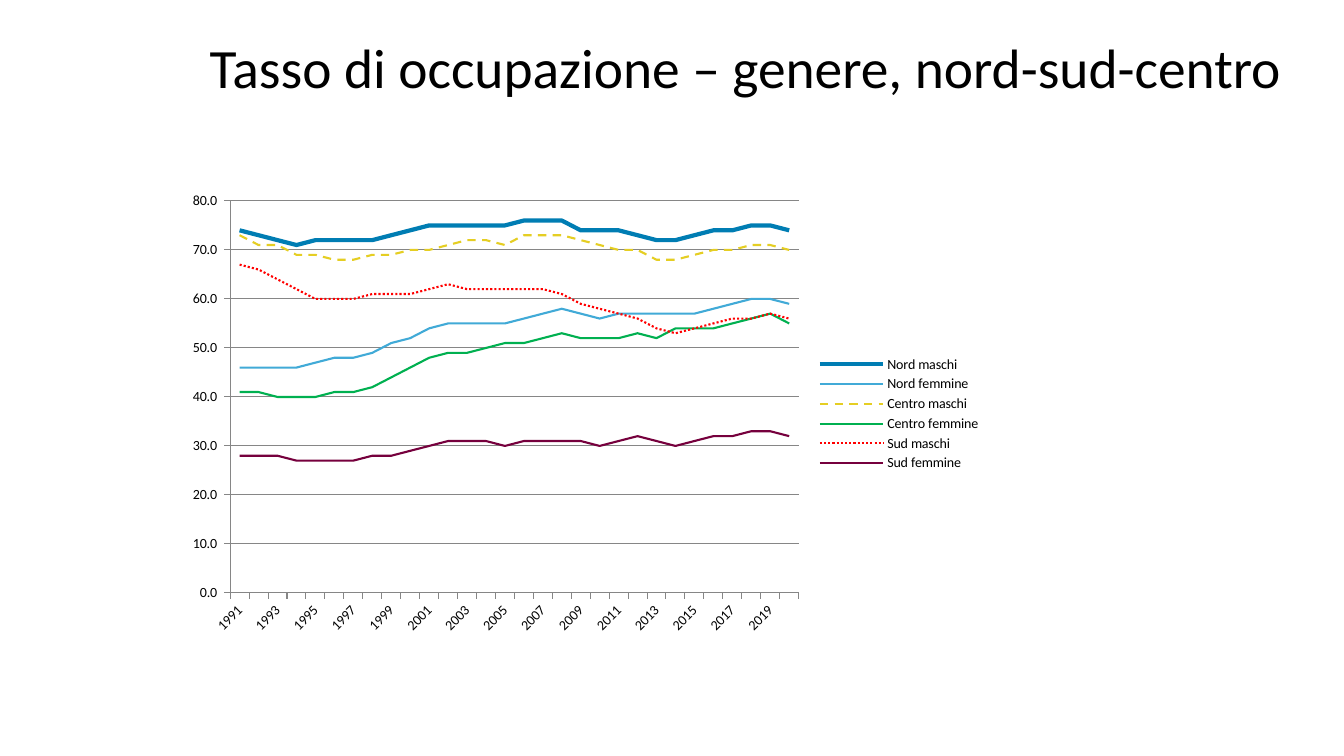
from lxml import etree
from pptx import Presentation
from pptx.chart.data import CategoryChartData
from pptx.dml.color import RGBColor
from pptx.enum.chart import XL_CHART_TYPE as ChartType, XL_LEGEND_POSITION as LegendPosition
from pptx.enum.chart import XL_MARKER_STYLE as MarkerStyle, XL_TICK_MARK as TickMark
from pptx.enum.dml import MSO_LINE_DASH_STYLE as Dash
from pptx.enum.text import MSO_ANCHOR as Anchor, MSO_AUTO_SIZE as AutoSize, PP_ALIGN as Align
from pptx.oxml.ns import qn
from pptx.util import Inches, Pt

FONT = "Calibri"
COLORS = {
    "text": "000000", "axis": "868686",
    "Nord maschi": "007DB3", "Nord femmine": "41AAD7",
    "Centro maschi": "E5CE23", "Centro femmine": "00B050",
    "Sud maschi": "FF0000", "Sud femmine": "76003D",
}
YEARS = [str(year) for year in range(1991, 2021)]
RATES = {
    "Nord maschi": [74, 73, 72, 71, 72, 72, 72, 72, 73, 74, 75, 75, 75, 75, 75,
                    76, 76, 76, 74, 74, 74, 73, 72, 72, 73, 74, 74, 75, 75, 74],
    "Nord femmine": [46, 46, 46, 46, 47, 48, 48, 49, 51, 52, 54, 55, 55, 55, 55,
                     56, 57, 58, 57, 56, 57, 57, 57, 57, 57, 58, 59, 60, 60, 59],
    "Centro maschi": [73, 71, 71, 69, 69, 68, 68, 69, 69, 70, 70, 71, 72, 72, 71,
                      73, 73, 73, 72, 71, 70, 70, 68, 68, 69, 70, 70, 71, 71, 70],
    "Centro femmine": [41, 41, 40, 40, 40, 41, 41, 42, 44, 46, 48, 49, 49, 50, 51,
                       51, 52, 53, 52, 52, 52, 53, 52, 54, 54, 54, 55, 56, 57, 55],
    "Sud maschi": [67, 66, 64, 62, 60, 60, 60, 61, 61, 61, 62, 63, 62, 62, 62,
                   62, 62, 61, 59, 58, 57, 56, 54, 53, 54, 55, 56, 56, 57, 56],
    "Sud femmine": [28, 28, 28, 27, 27, 27, 27, 28, 28, 29, 30, 31, 31, 31, 30,
                    31, 31, 31, 31, 30, 31, 32, 31, 30, 31, 32, 32, 33, 33, 32],
}
# Series that differ from a thin solid line
WIDTHS = {"Nord maschi": 3}
DASHES = {"Centro maschi": Dash.DASH, "Sud maschi": Dash.ROUND_DOT}


def rgb(name):
    return RGBColor.from_string(COLORS[name])


def format_font(font, size, color="text"):
    font.name, font.size, font.bold = FONT, Pt(size), False
    font.color.rgb = rgb(color)


def write_text(frame, text, *, size, color="text", align=Align.LEFT, spacing=1.0):
    para = frame.paragraphs[0]
    para.alignment, para.line_spacing = align, spacing
    span = para.add_run()
    span.text = text
    format_font(span.font, size, color)


def add_child(parent, tag, value):
    etree.SubElement(parent, qn(f"c:{tag}")).set("val", str(value))


def add_title(page, left, top, width, height):
    title = page.shapes.title
    title.left, title.top = Inches(left), Inches(top)
    title.width, title.height = Inches(width), Inches(height)
    frame = title.text_frame
    frame.word_wrap, frame.auto_size = True, AutoSize.NONE
    frame.vertical_anchor = Anchor.MIDDLE
    write_text(frame, "Tasso di occupazione – genere, nord-sud-centro",
               size=39.6, spacing=0.9)


def place_plot(chart, **fractions):
    """Fix the inner plot area as fractions of the chart box."""
    plot_area = chart.plots[0]._element.getparent()
    for old in plot_area.findall(qn("c:layout")):
        plot_area.remove(old)
    layout = etree.Element(qn("c:layout"))
    manual = etree.SubElement(layout, qn("c:manualLayout"))
    add_child(manual, "layoutTarget", "inner")
    for key in ("x", "y"):
        add_child(manual, f"{key}Mode", "edge")
    for key, value in fractions.items():
        add_child(manual, key, value)
    plot_area.insert(0, layout)


def format_axes(chart):
    years, rates = chart.category_axis, chart.value_axis
    for axis in (years, rates):
        axis.major_tick_mark, axis.minor_tick_mark = TickMark.OUTSIDE, TickMark.NONE
        axis.format.line.color.rgb = rgb("axis")
        axis.format.line.width = Pt(0.75)
        format_font(axis.tick_labels.font, 10)
    # Slanted label for every second year
    years.has_major_gridlines = False
    years._element.find(qn("c:txPr")).find(qn("a:bodyPr")).set("rot", "-2700000")
    skip = etree.Element(qn("c:tickLblSkip"))
    skip.set("val", "2")
    years._element.find(qn("c:noMultiLvlLbl")).addprevious(skip)
    rates.minimum_scale, rates.maximum_scale, rates.major_unit = 0, 80, 10
    rates.tick_labels.number_format = "#,##0.0_ ;\\-#,##0.0\\ "
    rates.tick_labels.number_format_is_linked = False
    rates.has_major_gridlines = True
    rates.major_gridlines.format.line.color.rgb = rgb("axis")
    rates.major_gridlines.format.line.width = Pt(0.75)


def add_rate_chart(page, left, top, width, height):
    data = CategoryChartData(number_format="0.0")
    data.categories = YEARS
    for name, values in RATES.items():
        data.add_series(name, values)
    chart = page.shapes.add_chart(ChartType.LINE, Inches(left), Inches(top),
                                  Inches(width), Inches(height), data).chart
    format_font(chart.font, 10)
    chart.has_title = False
    chart.plots[0].vary_by_categories = False
    place_plot(chart, x=0.066, y=0.036, w=0.698, h=0.855)
    format_axes(chart)

    # Lines
    for series in chart.plots[0].series:
        series.smooth = False
        series.marker.style = MarkerStyle.NONE
        line = series.format.line
        line.color.rgb = rgb(series.name)
        line.width = Pt(WIDTHS.get(series.name, 1.5))
        if series.name in DASHES:
            line.dash_style = DASHES[series.name]

    # Legend
    chart.has_legend = True
    chart.legend.position = LegendPosition.RIGHT
    chart.legend.include_in_layout = False
    format_font(chart.legend.font, 10)


def main():
    deck = Presentation()
    deck.slide_width, deck.slide_height = Inches(13.33), Inches(7.5)
    page = deck.slides.add_slide(deck.slide_layouts[5])
    add_title(page, 1.98, 0.37, 10.96, 0.65)
    add_rate_chart(page, 1.75, 1.83, 8.08, 4.55)
    deck.save("out.pptx")


if __name__ == "__main__":
    main()
